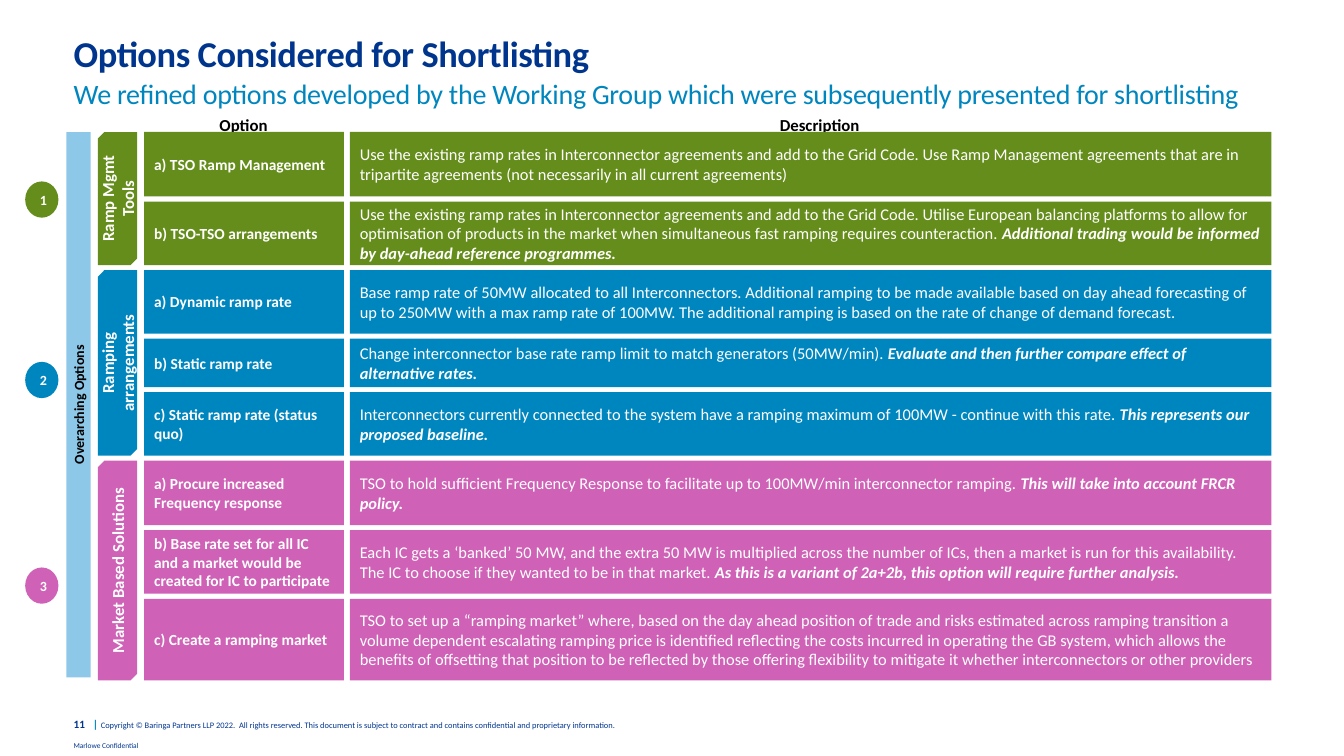
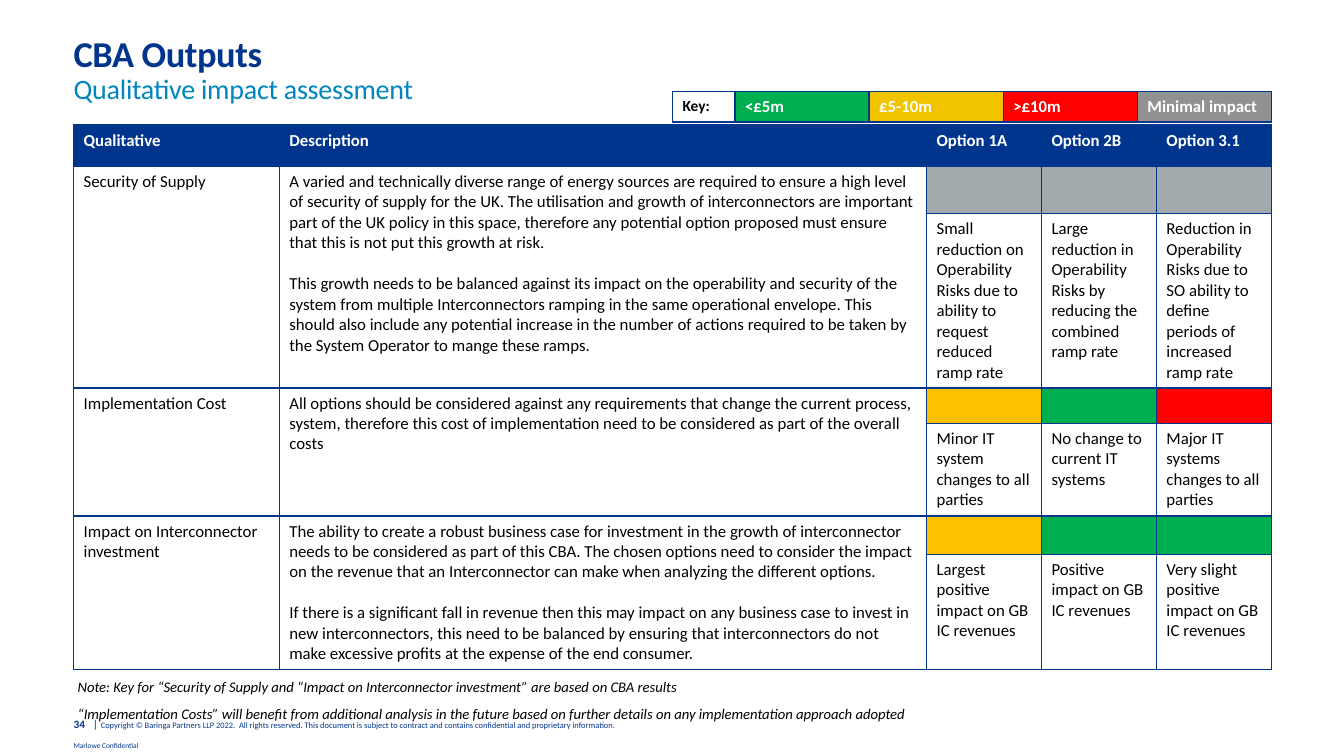
from dataclasses import dataclass
from lxml.etree import SubElement
from pptx import Presentation
from pptx.dml.color import RGBColor
from pptx.enum.shapes import MSO_SHAPE
from pptx.enum.text import MSO_ANCHOR, PP_ALIGN
from pptx.oxml.ns import qn
from pptx.util import Inches, Pt


@dataclass(frozen=True)
class Theme:
    """Colours, face and text formats shared by the slides."""
    face = "Calibri"
    navy, blue, sky = "00358E", "0086BF", "8DC8E8"
    lime, pink = "658D1B", "CF61B6"
    black, white, grey, dusk = "000000", "FFFFFF", "A2AAAD", "909193"
    green, amber, gold, red = "00B050", "FFC000", "F1C400", "FF0000"
    title = dict(size=26, color=navy, bold=True, track=-30)
    sub = dict(size=20, color=blue, track=-20)
    page = dict(size=8, color=navy, bold=True)
    bar = dict(size=8, color=blue, bold=True)
    legal = dict(size=6, color=navy)
    stamp = dict(size=5.3, color=navy)
    head = dict(size=12, color=black, bold=True)
    strip = dict(size=12, color=white, bold=True)
    spine = dict(size=10, color=black, bold=True)
    badge = dict(size=10, color=white, bold=True)
    name = dict(size=11, color=white, bold=True)
    desc = dict(size=11.7, color=white)
    stress = dict(size=11.7, color=white, bold=True, italic=True)
    key = dict(size=11, color=black, bold=True)
    cell = dict(size=12, color=black)
    note = dict(size=10.5, color=black, italic=True)


T = Theme()
LEGAL = ("Copyright © Baringa Partners LLP 2022.  All rights reserved. This document is "
         "subject to contract and contains confidential and proprietary information.")

GROUPS = [
    ("1", "Ramp Mgmt Tools", T.lime, 1.8, [
        (0.64, "a) TSO Ramp Management",
         "Use the existing ramp rates in Interconnector agreements and add to the Grid Code. "
         "Use Ramp Management agreements that are in tripartite agreements (not necessarily "
         "in all current agreements)", ""),
        (0.63, "b) TSO-TSO arrangements",
         "Use the existing ramp rates in Interconnector agreements and add to the Grid Code. "
         "Utilise European balancing platforms to allow for optimisation of products in the "
         "market when simultaneous fast ramping requires counteraction. ",
         "Additional trading would be informed by day-ahead reference programmes."),
    ]),
    ("2", "Ramping arrangements", T.blue, 3.59, [
        (0.63, "a) Dynamic ramp rate",
         "Base ramp rate of 50MW allocated to all Interconnectors. Additional ramping to be "
         "made available based on day ahead forecasting of up to 250MW with a max ramp rate of "
         "100MW. The additional ramping is based on the rate of change of demand forecast.", ""),
        (0.48, "b) Static ramp rate",
         "Change interconnector base rate ramp limit to match generators (50MW/min). ",
         "Evaluate and then further compare effect of alternative rates."),
        (0.63, "c) Static ramp rate (status quo)",
         "Interconnectors currently connected to the system have a ramping maximum of 100MW - "
         "continue with this rate. ", "This represents our proposed baseline."),
    ]),
    ("3", "Market Based Solutions", T.pink, 5.63, [
        (0.64, "a) Procure increased Frequency response",
         "TSO to hold sufficient Frequency Response to facilitate up to 100MW/min "
         "interconnector ramping. ", "This will take into account FRCR policy."),
        (0.63, "b) Base rate set for all IC and a market would be created for IC to participate",
         "Each IC gets a ‘banked’ 50 MW, and the extra 50 MW is multiplied across the number of "
         "ICs, then a market is run for this availability. The IC to choose if they wanted to be "
         "in that market. ",
         "As this is a variant of 2a+2b, this option will require further analysis."),
        (0.81, "c) Create a ramping market",
         "TSO to set up a “ramping market” where, based on the day ahead position of trade and "
         "risks estimated across ramping transition a volume dependent escalating ramping price "
         "is identified reflecting the costs incurred in operating the GB system, which allows "
         "the benefits of offsetting that position to be reflected by those offering flexibility "
         "to mitigate it whether interconnectors or other providers", ""),
    ]),
]

KEY = [("Key:", T.white, T.key), ("<£5m", T.green, T.strip), ("£5-10m", T.gold, T.strip),
       (">£10m", T.red, T.strip), ("Minimal impact", T.dusk, T.strip)]

HEADS = ["Qualitative", "Description", "Option 1A", "Option 2B", "Option 3.1"]
IMPACTS = [
    ("Security of Supply", [
        "A varied and technically diverse range of energy sources are required to ensure a high "
        "level of security of supply for the UK. The utilisation and growth of interconnectors "
        "are important part of the UK policy in this space, therefore any potential option "
        "proposed must ensure that this is not put this growth at risk.",
        "This growth needs to be balanced against its impact on the operability and security of "
        "the system from multiple Interconnectors ramping in the same operational envelope. This "
        "should also include any potential increase in the number of actions required to be "
        "taken by the System Operator to mange these ramps."],
     [(T.grey, "Small reduction on Operability Risks due to ability to request reduced ramp rate"),
      (T.grey, "Large reduction in Operability Risks by reducing the combined ramp rate"),
      (T.grey, "Reduction in Operability Risks due to SO ability to define periods of "
               "increased ramp rate")]),
    ("Implementation Cost", [
        "All options should be considered against any requirements that change the current "
        "process, system, therefore this cost of implementation need to be considered as part "
        "of the overall costs"],
     [(T.amber, "Minor IT system changes to all parties"),
      (T.green, "No change to current IT systems"),
      (T.red, "Major IT systems changes to all parties")]),
    ("Impact on Interconnector investment", [
        "The ability to create a robust business case for investment in the growth of "
        "interconnector needs to be considered as part of this CBA. The chosen options need to "
        "consider the impact on the revenue that an Interconnector can make when analyzing the "
        "different options.",
        "If there is a significant fall in revenue then this may impact on any business case to "
        "invest in new interconnectors, this need to be balanced by ensuring that "
        "interconnectors do not make excessive profits at the expense of the end consumer."],
     [(T.amber, "Largest positive impact on GB IC revenues"),
      (T.green, "Positive impact on GB IC revenues"),
      (T.green, "Very slight positive impact on GB IC revenues")]),
]

NOTES = ["Note: Key for “Security of Supply and “Impact on Interconnector investment” are based "
         "on CBA results",
         "“Implementation Costs” will benefit from additional analysis in the future based on "
         "further details on any implementation approach adopted"]


def tint(text):
    """Turn a hex string into a colour."""
    return RGBColor.from_string(text)


def add_run(para, text, look):
    """Add one run in the given format."""
    run = para.add_run()
    run.text = text
    run.font.name = T.face
    for key, value in look.items():
        if key == "color":
            run.font.color.rgb = tint(value)
        elif key == "track":
            run.font._element.set("spc", str(value))
        else:
            setattr(run.font, key, Pt(value) if key == "size" else value)


def write(frame, paras, gap=0, **form):
    """Fill a frame with paragraphs, each a list of (text, format) runs."""
    for index, runs in enumerate(paras):
        para = frame.add_paragraph() if index else frame.paragraphs[0]
        if index and gap:
            para.space_before = Pt(gap)
        for key, value in form.items():
            setattr(para, key, value)
        for text, look in runs:
            add_run(para, text, look)


def inset(frame, *sides):
    """Set the left, top, right and bottom margins of a frame."""
    for side, value in zip(("left", "top", "right", "bottom"), sides):
        setattr(frame, "margin_" + side, Inches(value))


def label(slide, box, paras, sides=(0, 0, 0, 0), **form):
    """Place a wrapping text box."""
    frame = slide.shapes.add_textbox(*map(Inches, box)).text_frame
    frame.word_wrap = True
    inset(frame, *sides)
    write(frame, paras, **form)
    return frame


def block(slide, kind, box, fill, runs, align=PP_ALIGN.LEFT, turn=False):
    """Place a filled shape whose seen bounds are the box, turned upright if asked."""
    x, y, w, h = box
    if turn:
        x, y, w, h = x + (w - h) / 2, y + (h - w) / 2, h, w
    shape = slide.shapes.add_shape(kind, *map(Inches, (x, y, w, h)))
    shape.rotation = 270 if turn else 0
    shape.shadow.inherit = False
    shape.fill.solid()
    shape.fill.fore_color.rgb = tint(fill)
    shape.line.fill.background()
    shape.text_frame.vertical_anchor = MSO_ANCHOR.MIDDLE
    write(shape.text_frame, [runs], alignment=align)
    return shape


def paint(cell, fill, paras, gap=0):
    """Border, fill and write one table cell."""
    props = cell._tc.get_or_add_tcPr()
    for side in ("lnL", "lnR", "lnT", "lnB"):
        line = SubElement(props, qn("a:" + side), w=str(Pt(1)))
        SubElement(SubElement(line, qn("a:solidFill")), qn("a:srgbClr"), val=T.navy)
    cell.fill.solid()
    cell.fill.fore_color.rgb = tint(fill)
    if paras:
        write(cell.text_frame, paras, gap)
    else:
        SubElement(cell.text_frame.paragraphs[0]._p, qn("a:endParaRPr"), sz="1200")


def grid(slide, x, y, cols, rows):
    """Place a plain table with the given column widths and row heights."""
    box = (x, y, sum(cols), sum(rows))
    table = slide.shapes.add_table(len(rows), len(cols), *map(Inches, box)).table
    table.first_row = table.horz_banding = False
    for col, width in zip(table.columns, cols):
        col.width = Inches(width)
    for row, height in zip(table.rows, rows):
        row.height = Inches(height)
    return table


def base(deck, title, sub, top, page):
    """Add a slide with its title, subtitle and footer."""
    slide = deck.slides.add_slide(deck.slide_layouts[6])
    frame = label(slide, (0.73, 7.12, 7.28, 0.27), [[]])
    para = frame.paragraphs[0]
    tabs = SubElement(para._p.get_or_add_pPr(), qn("a:tabLst"))
    for stop in (0.19, 0.27):
        SubElement(tabs, qn("a:tab"), pos=str(Inches(stop)), algn="l")
    for text, look in ((page + "\t", T.page), ("|\t", T.bar), (LEGAL, T.legal)):
        add_run(para, text, look)
    label(slide, (0.68, 7.33, 1, 0.17), [[("Marlowe Confidential", T.stamp)]],
          (0.05, 0.03, 0.05, 0.07))
    label(slide, (0.73, 0.39, 11.88, 0.36), [[(title, T.title)]], line_spacing=0.8)
    label(slide, (0.73, top, 11.88, 0.38), [[(sub, T.sub)]], (0, 0.08, 0, 0), line_spacing=0.9)
    return slide


def options(slide, box, gap=0.05):
    """Draw the option groups, each with a badge, a strip and its rows."""
    x, y, w, h = box
    mid = PP_ALIGN.CENTER
    for text, left, width in (("Option", 1.82, 0.69), ("Description", 6.23, 3.3)):
        label(slide, (x + left, y - 0.19, width, 0.19), [[(text, T.head)]],
              alignment=mid, line_spacing=1.1)
    spine = block(slide, MSO_SHAPE.RECTANGLE, (x + 0.41, y, 0.24, h - 0.03), T.sky,
                  [("Overarching Options", T.spine)], mid, True)
    inset(spine.text_frame, 0, 0, 0, 0)
    for mark, name, fill, spot, rows in GROUPS:
        tall = sum(row[0] for row in rows) + gap * (len(rows) - 1)
        block(slide, MSO_SHAPE.SNIP_2_DIAG_RECTANGLE, (x + 0.72, y, 0.39, tall), fill,
              [(name, T.strip)], mid, True)
        block(slide, MSO_SHAPE.OVAL, (x, spot, 0.33, 0.36), fill, [(mark, T.badge)], mid)
        for high, option, plain, stress in rows:
            runs = [(plain, T.desc)] + ([(stress, T.stress)] if stress else [])
            block(slide, MSO_SHAPE.RECTANGLE, (x + 1.18, y, 1.98, high), fill,
                  [(option, T.name)])
            block(slide, MSO_SHAPE.RECTANGLE, (x + 3.22, y, w - 3.22, high), fill, runs)
            y += high + gap


def legend(slide, x, y):
    """Draw the colour key."""
    table = grid(slide, x, y, [0.62] + [1.33] * 4, [0.3])
    for index, (text, fill, look) in enumerate(KEY):
        paint(table.cell(0, index), fill, [[(text, look)]])


def impacts(slide, x, y):
    """Draw the assessment table, two rows to each impact."""
    table = grid(slide, x, y, [2.04, 6.42] + [1.14] * 3,
                 [0.41, 0.47, 1.73, 0.35, 0.92, 0.38, 1.14])
    for col, text in enumerate(HEADS):
        paint(table.cell(0, col), T.navy, [[(text, T.strip)]])
    for index, (name, paras, marks) in enumerate(IMPACTS):
        row = 2 * index + 1
        for col, lines in enumerate(([name], paras)):
            paint(table.cell(row, col), T.white, [[(line, T.cell)] for line in lines], 14.6)
            paint(table.cell(row + 1, col), T.white, [])
            table.cell(row, col).merge(table.cell(row + 1, col))
        for col, (fill, text) in enumerate(marks, 2):
            paint(table.cell(row, col), fill, [])
            paint(table.cell(row + 1, col), T.white, [[(text, T.cell)]])


def main():
    """Build and save the deck."""
    deck = Presentation()
    deck.slide_width, deck.slide_height = Inches(13.33), Inches(7.5)
    slide = base(deck, "Options Considered for Shortlisting",
                 "We refined options developed by the Working Group which were subsequently "
                 "presented for shortlisting", 0.72, "11")
    options(slide, (0.25, 1.31, 12.36, 5.44))
    slide = base(deck, "CBA Outputs", "Qualitative impact assessment", 0.67, "34")
    legend(slide, 6.67, 0.91)
    impacts(slide, 0.73, 1.24)
    label(slide, (0.69, 6.63, 9.88, 0.61), [[(line, T.note)] for line in NOTES],
          (0.08, 0.08, 0.08, 0.08), line_spacing=1.1, space_after=Pt(5))
    deck.save("out.pptx")


if __name__ == "__main__":
    main()
